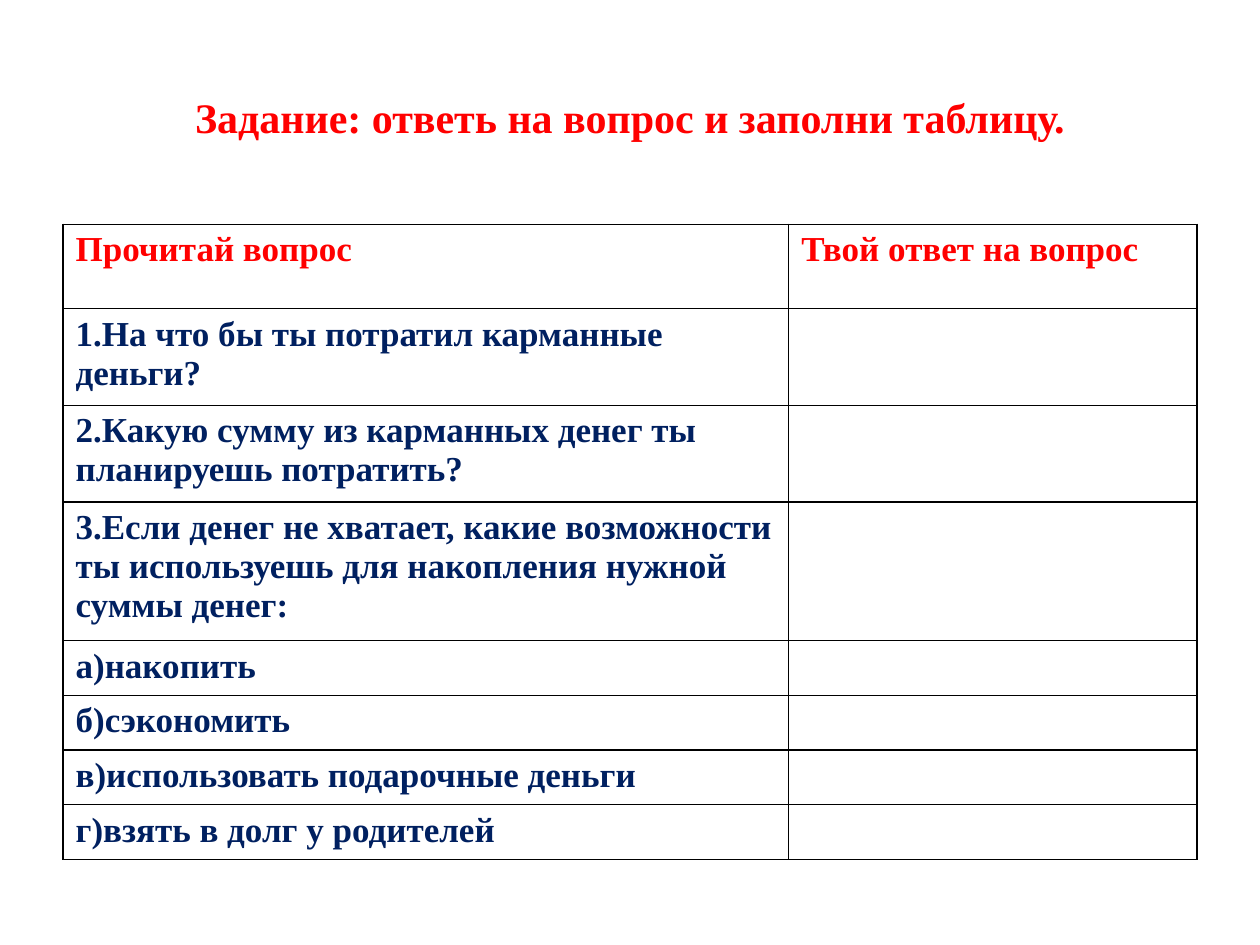
from typing import NamedTuple

from lxml.etree import SubElement
from pptx import Presentation
from pptx.dml.color import RGBColor
from pptx.enum.text import MSO_ANCHOR, PP_ALIGN
from pptx.oxml.ns import qn
from pptx.util import Inches, Pt

FONT = "Times New Roman"
COLORS = {"red": "FF0000", "navy": "002060", "black": "000000"}
WIDTHS = (5.76, 3.24)


class Row(NamedTuple):
    texts: tuple[str, str]
    height: float = 0.41
    color: str = "navy"


ROWS = [
    Row(("Прочитай вопрос", "Твой ответ на вопрос"), 0.67, "red"),
    Row(("1.На что бы ты потратил карманные деньги?", ""), 0.67),
    Row(("2.Какую сумму из карманных денег ты планируешь потратить?", "")),
    Row(("3.Если денег не хватает, какие возможности ты используешь "
         "для накопления нужной суммы денег:", "")),
    Row(("а)накопить", "")),
    Row(("б)сэкономить", "")),
    Row(("в)использовать подарочные деньги", "")),
    Row(("г)взять в долг у родителей", "")),
]


def add_run(para, text: str, size: int, color: str) -> None:
    run = para.add_run()
    run.text = text
    font = run.font
    font.name, font.size, font.bold = FONT, Pt(size), True
    font.color.rgb = RGBColor.from_string(COLORS[color])


def add_title(slide, text: str) -> None:
    box = slide.shapes.add_textbox(Inches(0.5), Inches(0.3), Inches(9), Inches(1.25))
    frame = box.text_frame
    frame.word_wrap = True
    frame.vertical_anchor = MSO_ANCHOR.MIDDLE
    para = frame.paragraphs[0]
    para.alignment = PP_ALIGN.CENTER
    add_run(para, text, 24, "red")


def add_border(cell) -> None:
    """Draw a thin line on all four sides; lines must come before the fill."""
    props = cell._tc.get_or_add_tcPr()
    for pos, side in enumerate(("lnL", "lnR", "lnT", "lnB")):
        line = SubElement(props, qn(f"a:{side}"), w=str(Pt(1)))
        fill = SubElement(line, qn("a:solidFill"))
        SubElement(fill, qn("a:srgbClr"), val=COLORS["black"])
        props.insert(pos, line)


def add_grid(slide, rows: list[Row]) -> None:
    height = sum(row.height for row in rows)
    frame = slide.shapes.add_table(
        len(rows), len(WIDTHS), Inches(0.5), Inches(1.78),
        Inches(sum(WIDTHS)), Inches(height))
    table = frame.table
    table.first_row = table.horz_banding = False
    for col, width in zip(table.columns, WIDTHS):
        col.width = Inches(width)
    for line, row in zip(table.rows, rows):
        line.height = Inches(row.height)
        for cell, text in zip(line.cells, row.texts):
            cell.fill.background()
            add_border(cell)
            if text:
                add_run(cell.text_frame.paragraphs[0], text, 20, row.color)


def main() -> None:
    deck = Presentation()
    deck.slide_width, deck.slide_height = Inches(10), Inches(7.5)
    slide = deck.slides.add_slide(deck.slide_layouts[6])
    add_title(slide, "Задание: ответь на вопрос и заполни таблицу.")
    add_grid(slide, ROWS)
    deck.save("out.pptx")


if __name__ == "__main__":
    main()
